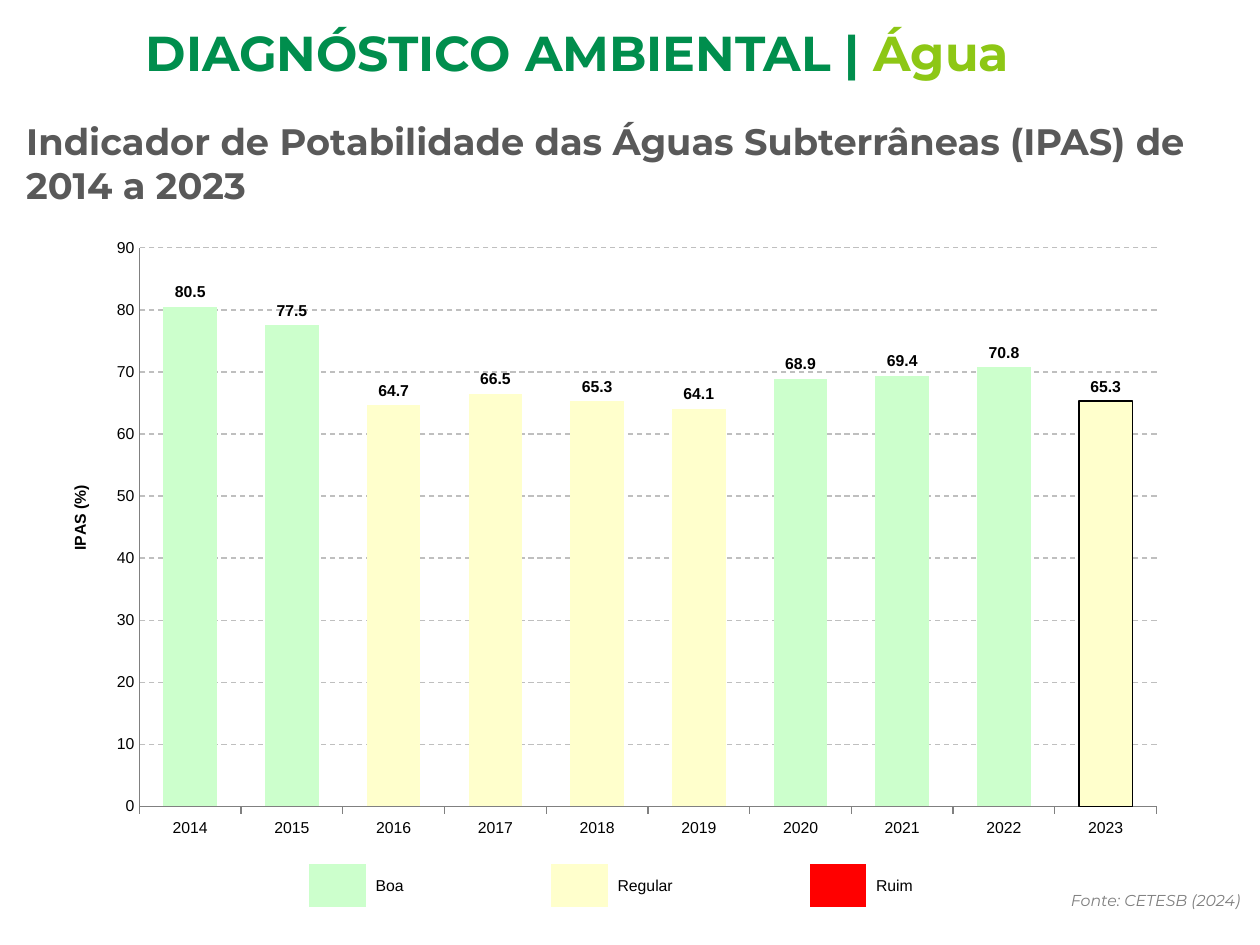
from dataclasses import dataclass

from lxml import etree
from pptx import Presentation
from pptx.chart.data import CategoryChartData
from pptx.dml.color import RGBColor
from pptx.enum.chart import XL_CHART_TYPE, XL_LABEL_POSITION, XL_TICK_MARK
from pptx.enum.dml import MSO_LINE
from pptx.enum.text import MSO_ANCHOR, MSO_AUTO_SIZE
from pptx.oxml.ns import qn
from pptx.util import Cm, Pt

COLUMN = XL_CHART_TYPE.COLUMN_CLUSTERED
LABEL_TOP = XL_LABEL_POSITION.OUTSIDE_END
TICK_OUT, TICK_NONE = XL_TICK_MARK.OUTSIDE, XL_TICK_MARK.NONE
DASH = MSO_LINE.DASH
MIDDLE = MSO_ANCHOR.MIDDLE
GROW = MSO_AUTO_SIZE.SHAPE_TO_FIT_TEXT


@dataclass(frozen=True)
class Theme:
    head_font: str = "Montserrat"
    body_font: str = "Arial"
    title_size: int = 28
    sub_size: int = 21
    small_size: int = 9
    dark_green: str = "008E4D"
    lime: str = "8DC715"
    gray: str = "595959"
    axis: str = "808080"
    grid: str = "BFBFBF"
    ink: str = "000000"
    good: str = "CCFFCC"
    fair: str = "FFFFCC"
    bad: str = "FF0000"


THEME = Theme()
YEARS = [str(year) for year in range(2014, 2024)]
RATES = [80.5, 77.5, 64.7, 66.5, 65.3, 64.1, 68.9, 69.4, 70.8, 65.3]
FAIR_YEARS = {"2016", "2017", "2018", "2019", "2023"}
LEGEND = [("Boa", THEME.good, 3.71), ("Regular", THEME.fair, 4.04),
          ("Ruim", THEME.bad, 1.73)]
SWATCH = 1.17


def color(code):
    return RGBColor.from_string(code)


def set_font(font, name, size, code, bold=False, italic=False):
    font.name, font.size = name, Pt(size)
    font.color.rgb = color(code)
    font.bold, font.italic = bold, italic


def add_text(slide, box, parts, size, wrap=True, bold=False, italic=False):
    """Add one line of heading type; parts are (text, color) pairs."""
    frame = slide.shapes.add_textbox(*map(Cm, box)).text_frame
    frame.word_wrap = wrap
    frame.auto_size = GROW
    para = frame.paragraphs[0]
    set_font(para.font, THEME.head_font, size, parts[0][1], bold, italic)
    for text, code in parts:
        run = para.add_run()
        run.text = text
        if code != parts[0][1]:
            run.font.color.rgb = color(code)


def add_legend(slide):
    width = sum(SWATCH + gap for _, _, gap in LEGEND)
    table = slide.shapes.add_table(1, 2 * len(LEGEND), Cm(6.22), Cm(17.4),
                                   Cm(width), Cm(0.89)).table
    table.first_row = table.horz_banding = False
    for index, (name, code, gap) in enumerate(LEGEND):
        key, label = 2 * index, 2 * index + 1
        table.columns[key].width = Cm(SWATCH)
        table.columns[label].width = Cm(gap)
        for cell in (table.cell(0, key), table.cell(0, label)):
            cell.margin_left = cell.margin_right = Cm(0.18)
            cell.margin_top = cell.margin_bottom = 0
            cell.vertical_anchor = MIDDLE
            para = cell.text_frame.paragraphs[0]
            para.line_spacing = 1.07
            set_font(para.font, THEME.body_font, THEME.small_size, THEME.ink)
        swatch = table.cell(0, key).fill
        swatch.solid()
        swatch.fore_color.rgb = color(code)
        table.cell(0, label).fill.background()
        table.cell(0, label).text_frame.paragraphs[0].add_run().text = name


def place(node, **spots):
    """Give a chart part a fixed place, as fractions of the chart."""
    layout = node.find(qn("c:layout"))
    if layout is None:
        layout = etree.Element(qn("c:layout"))
        text = node.find(qn("c:tx"))
        node.insert(0 if text is None else node.index(text) + 1, layout)
    manual = etree.SubElement(layout, qn("c:manualLayout"))
    if "w" in spots:
        etree.SubElement(manual, qn("c:layoutTarget")).set("val", "inner")
    for mode in ("xMode", "yMode"):
        etree.SubElement(manual, qn("c:" + mode)).set("val", "edge")
    for name, value in spots.items():
        etree.SubElement(manual, qn("c:" + name)).set("val", str(value))


def set_line(line, code):
    line.color.rgb = color(code)
    line.width = Pt(0.75)


def style_axes(chart):
    years, rates = chart.category_axis, chart.value_axis
    for axis, tick in ((years, TICK_OUT), (rates, TICK_NONE)):
        axis.major_tick_mark, axis.minor_tick_mark = tick, TICK_NONE
        set_line(axis.format.line, THEME.axis)
    rates.minimum_scale, rates.maximum_scale = 0, 90
    rates.major_unit = 10
    rates.tick_labels.number_format = "0"
    rates.tick_labels.number_format_is_linked = False
    grid = rates.major_gridlines.format.line
    set_line(grid, THEME.grid)
    grid.dash_style = DASH
    para = rates.axis_title.text_frame.paragraphs[0]
    para.add_run().text = "IPAS (%)"
    set_font(para.font, THEME.body_font, THEME.small_size, THEME.ink, True)
    place(rates.axis_title._element, x=0.02, y=0.41)


def add_bars(slide):
    data = CategoryChartData(number_format="0.0")
    data.categories = YEARS
    data.add_series("IPAS", RATES)
    chart = slide.shapes.add_chart(COLUMN, Cm(0.89), Cm(4.57), Cm(22.86),
                                   Cm(12.57), data).chart
    chart.has_legend = chart.has_title = False
    set_font(chart.font, THEME.body_font, THEME.small_size, THEME.ink)
    style_axes(chart)
    place(chart._chartSpace.chart.plotArea, x=0.084, y=0.034, w=0.897, h=0.896)

    plot = chart.plots[0]
    plot.gap_width = 90
    plot.vary_by_categories = False
    series = plot.series[0]
    for index, year in enumerate(YEARS):
        fill = series.points[index].format.fill
        fill.solid()
        fill.fore_color.rgb = color(THEME.fair if year in FAIR_YEARS
                                    else THEME.good)
    # The latest year is outlined
    set_line(series.points[len(YEARS) - 1].format.line, THEME.ink)

    plot.has_data_labels = True
    labels = plot.data_labels
    labels.show_value = True
    labels.position = LABEL_TOP
    labels.number_format, labels.number_format_is_linked = "0.0", False
    set_font(labels.font, THEME.body_font, THEME.small_size, THEME.ink, True)


def main():
    deck = Presentation()
    deck.slide_width, deck.slide_height = Cm(25.4), Cm(19.05)
    slide = deck.slides.add_slide(deck.slide_layouts[6])

    # Source and headings
    add_text(slide, (21.34, 17.83, 4.06, 0.64),
             [("Fonte: CETESB (2024)", THEME.axis)],
             THEME.small_size, wrap=False, italic=True)
    add_text(slide, (0.28, 2.26, 24.64, 2.06),
             [("Indicador de Potabilidade das Águas Subterrâneas (IPAS) "
               "de 2014 a 2023", THEME.gray)], THEME.sub_size, bold=True)
    add_text(slide, (2.69, 0.33, 22.23, 1.45),
             [("DIAGNÓSTICO AMBIENTAL | ", THEME.dark_green),
              ("Água", THEME.lime)], THEME.title_size, bold=True)

    # Chart and its key
    add_legend(slide)
    add_bars(slide)
    deck.save("out.pptx")


if __name__ == "__main__":
    main()
